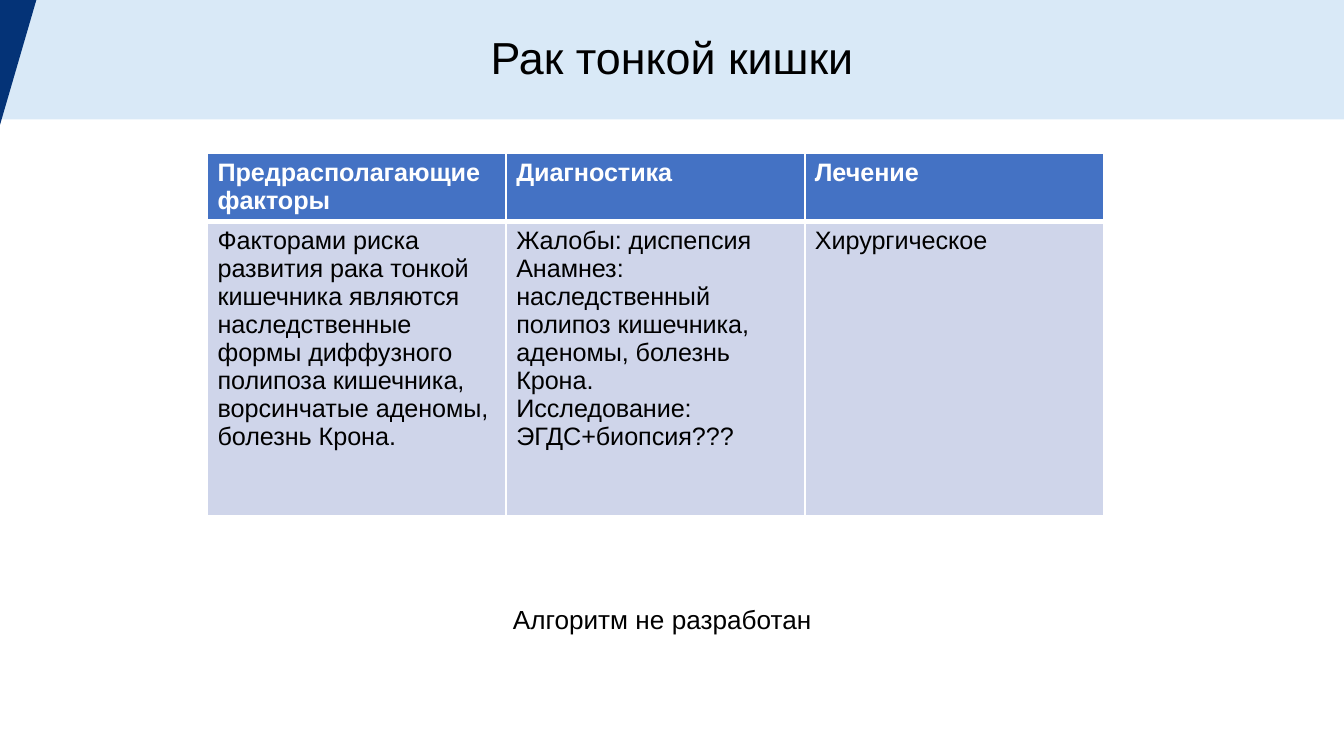
from lxml import etree
from pptx import Presentation
from pptx.dml.color import RGBColor
from pptx.enum import text
from pptx.oxml import ns
from pptx.util import Pt

WHITE = RGBColor(0xFF, 0xFF, 0xFF)
BLACK = RGBColor(0x00, 0x00, 0x00)
PALE_BLUE = RGBColor(0xD9, 0xE9, 0xF7)
NAVY = RGBColor(0x04, 0x33, 0x77)
HEADER_BLUE = RGBColor(0x44, 0x72, 0xC4)
BODY_BLUE = RGBColor(0xCF, 0xD5, 0xEA)

HEADERS = ["Предрасполагающие факторы", "Диагностика", "Лечение"]
DETAILS = [
    ["Факторами риска развития рака тонкой кишечника являются наследственные "
     "формы диффузного полипоза кишечника, ворсинчатые аденомы, болезнь Крона."],
    ["Жалобы: диспепсия", "Анамнез:",
     "наследственный полипоз кишечника, аденомы, болезнь Крона.",
     "Исследование:", "ЭГДС+биопсия???"],
    ["Хирургическое"],
]


def write_lines(frame, lines, size, color=BLACK, bold=False, align=text.PP_ALIGN.LEFT):
    """Write each line as a paragraph with one formatted run."""
    for index, line in enumerate(lines):
        paragraph = frame.add_paragraph() if index else frame.paragraphs[0]
        paragraph.alignment = align
        run = paragraph.add_run()
        run.text = line
        run.font.name = "Arial"
        run.font.size = Pt(size)
        run.font.bold = bold
        run.font.color.rgb = color


def add_title(slide, title):
    """Turn the title placeholder into the pale band at the top."""
    shape = slide.shapes.title
    shape.left, shape.top, shape.width, shape.height = Pt(0), Pt(-3), Pt(720), Pt(67)
    shape.fill.solid()
    shape.fill.fore_color.rgb = PALE_BLUE
    shape.text_frame.vertical_anchor = text.MSO_ANCHOR.MIDDLE
    write_lines(shape.text_frame, [title], 24, align=text.PP_ALIGN.CENTER)


def add_corner(slide):
    """Draw the dark wedge at the left end of the title band."""
    builder = slide.shapes.build_freeform(Pt(0), Pt(0))
    builder.add_line_segments([(Pt(19.5), Pt(0)), (Pt(0), Pt(67))], close=True)
    shape = builder.convert_to_shape()
    shape.shadow.inherit = False
    shape.fill.solid()
    shape.fill.fore_color.rgb = NAVY
    shape.line.fill.background()


def set_borders(cell, widths):
    """Give the cell white borders, with widths in points by side."""
    properties = cell._tc.get_or_add_tcPr()
    for position, (side, width) in enumerate(widths.items()):
        line = etree.Element(ns.qn(f"a:ln{side}"), w=str(Pt(width)))
        fill = etree.SubElement(line, ns.qn("a:solidFill"))
        etree.SubElement(fill, ns.qn("a:srgbClr"), val=str(WHITE))
        properties.insert(position, line)


def fill_cell(cell, lines, fill, color, bold, widths):
    """Format one table cell and write its lines."""
    cell.margin_left = cell.margin_right = Pt(5.4)
    cell.margin_top = cell.margin_bottom = Pt(2.7)
    cell.fill.solid()
    cell.fill.fore_color.rgb = fill
    set_borders(cell, widths)
    write_lines(cell.text_frame, lines, 13.5, color, bold)


def add_summary_table(slide):
    """Add the table with a header row and a row of details."""
    frame = slide.shapes.add_table(2, 3, Pt(111.2), Pt(82.2), Pt(480), Pt(194))
    table = frame.table
    for row, height in zip(table.rows, (36.5, 157.5)):
        row.height = Pt(height)
    for column, (header, details) in enumerate(zip(HEADERS, DETAILS)):
        table.columns[column].width = Pt(160)
        fill_cell(table.cell(0, column), [header], HEADER_BLUE, WHITE, True,
                  {"L": 1, "R": 1, "T": 1, "B": 3})
        fill_cell(table.cell(1, column), details, BODY_BLUE, BLACK, False,
                  {"L": 1, "R": 1, "T": 3, "B": 1})


def add_note(slide, note):
    """Add the centred remark below the table."""
    box = slide.shapes.add_textbox(Pt(267), Pt(319.8), Pt(175.7), Pt(24.2))
    box.text_frame.word_wrap = False
    write_lines(box.text_frame, [note], 14, align=text.PP_ALIGN.CENTER)


def main():
    """Build and save the presentation."""
    presentation = Presentation()
    presentation.slide_width, presentation.slide_height = Pt(720), Pt(405)
    slide = presentation.slides.add_slide(presentation.slide_layouts[5])
    add_title(slide, "Рак тонкой кишки")
    add_corner(slide)
    add_summary_table(slide)
    add_note(slide, "Алгоритм не разработан")
    presentation.save("out.pptx")


if __name__ == "__main__":
    main()
